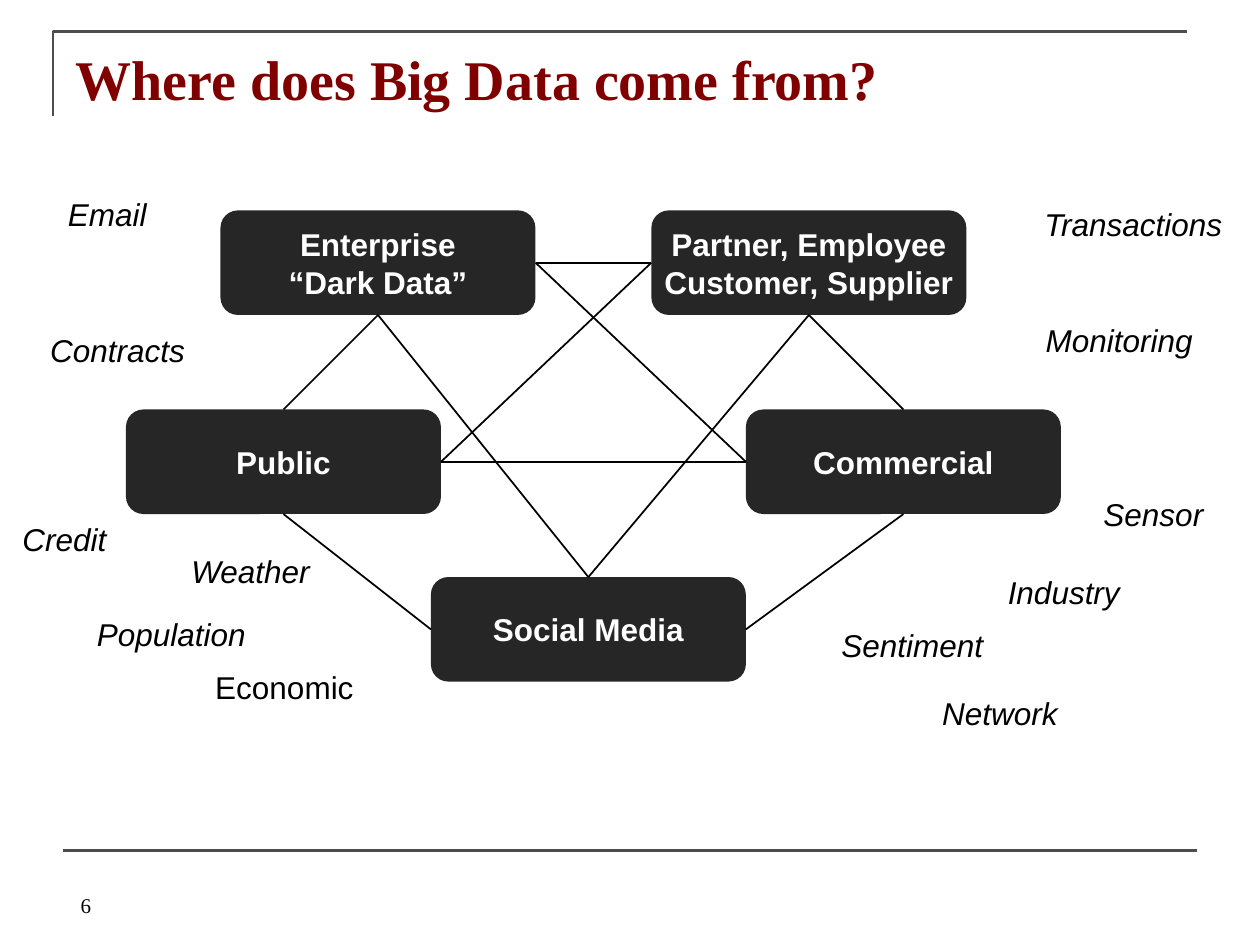
from dataclasses import dataclass

from pptx import Presentation
from pptx.dml.color import RGBColor
from pptx.enum.shapes import MSO_CONNECTOR, MSO_SHAPE
from pptx.enum.text import MSO_ANCHOR, MSO_AUTO_SIZE, PP_ALIGN
from pptx.oxml.ns import qn
from pptx.util import Inches, Pt

TOP, LEFT, BOTTOM, RIGHT = range(4)  # connection sites of a box
STRAIGHT = MSO_CONNECTOR.STRAIGHT
ROUNDED = MSO_SHAPE.ROUNDED_RECTANGLE
CENTER = PP_ALIGN.CENTER
ANCHOR_TOP, ANCHOR_MID, ANCHOR_LOW = (
    MSO_ANCHOR.TOP, MSO_ANCHOR.MIDDLE, MSO_ANCHOR.BOTTOM)
NO_FIT, GROW = MSO_AUTO_SIZE.NONE, MSO_AUTO_SIZE.SHAPE_TO_FIT_TEXT


@dataclass(frozen=True)
class Theme:
    rule: RGBColor = RGBColor(0x4D, 0x4D, 0x4D)
    title: RGBColor = RGBColor(0x80, 0x00, 0x00)
    box: RGBColor = RGBColor(0x26, 0x26, 0x26)
    light: RGBColor = RGBColor(0xFF, 0xFF, 0xFF)
    dark: RGBColor = RGBColor(0x00, 0x00, 0x00)
    serif: str = "Times New Roman"
    sans: str = "Arial"
    title_size: Pt = Pt(32)
    body_size: Pt = Pt(18)
    page_size: Pt = Pt(12)
    rule_width: Pt = Pt(1.5)
    link_width: Pt = Pt(1)


THEME = Theme()

BOX_SIZE = (2.5, 0.83)
BOXES = {
    "dark": ("Enterprise\v“Dark Data”", 1.75, 1.67),
    "people": ("Partner, Employee\vCustomer, Supplier", 5.17, 1.67),
    "public": ("Public", 1, 3.25),
    "trade": ("Commercial", 5.92, 3.25),
    "social": ("Social Media", 3.42, 4.58),
}
LINKS = [
    ("people", LEFT, "dark", RIGHT),
    ("people", LEFT, "public", RIGHT),
    ("people", BOTTOM, "social", TOP),
    ("people", BOTTOM, "trade", TOP),
    ("dark", BOTTOM, "social", TOP),
    ("dark", BOTTOM, "public", TOP),
    ("public", BOTTOM, "social", LEFT),
    ("trade", BOTTOM, "social", RIGHT),
    ("dark", RIGHT, "trade", LEFT),
    ("trade", LEFT, "public", RIGHT),
]
# text, left, top, width, italic
LABELS = [
    ("Transactions", 8.19, 1.58, 1.64, True),
    ("Monitoring", 8.2, 2.5, 1.38, True),
    ("Sensor", 8.66, 3.88, 1, True),
    ("Economic", 1.61, 5.25, 1.31, False),
    ("Population", 0.67, 4.83, 1.39, True),
    ("Sentiment", 6.58, 4.92, 1.34, True),
    ("Email", 0.44, 1.5, 0.83, True),
    ("Contracts", 0.3, 2.58, 1.28, True),
    ("Network", 7.38, 5.46, 1.13, True),
    ("Industry", 7.9, 4.5, 1.1, True),
    ("Credit", 0.08, 4.08, 0.88, True),
    ("Weather", 1.42, 4.33, 1.15, True),
]


def write(frame, text, font, size, color, bold=False, italic=False):
    frame.text = text
    for run in frame.paragraphs[0].runs:
        run.font.name = font
        run.font.size = size
        run.font.color.rgb = color
        run.font.bold = bold
        run.font.italic = italic


def draw_line(line, color, width):
    line.color.rgb = color
    line.width = width


def add_line(slide, start, end, color, width):
    line = slide.shapes.add_connector(
        STRAIGHT, *(Inches(n) for n in (*start, *end)))
    draw_line(line.line, color, width)
    props = line._element.spPr
    props.append(props.makeelement(qn("a:effectLst"), {}))
    return line


def add_corner(slide):
    """Draw the open corner rule around the title."""
    pen = slide.shapes.build_freeform(Inches(0.42), Inches(0.92))
    pen.add_line_segments(
        [(Inches(0.42), Inches(0.25)), (Inches(9.42), Inches(0.25))],
        close=False)
    corner = pen.convert_to_shape()
    corner.fill.background()
    corner.shadow.inherit = False
    draw_line(corner.line, THEME.rule, THEME.rule_width)


def set_title(slide, text):
    title = slide.shapes.title
    title.left, title.top = Inches(0.5), Inches(0.3)
    title.width, title.height = Inches(9), Inches(1.25)
    frame = title.text_frame
    write(frame, text, THEME.serif, THEME.title_size, THEME.title, bold=True)
    frame.paragraphs[0].alignment = PP_ALIGN.LEFT
    frame.vertical_anchor = ANCHOR_TOP
    frame.auto_size = NO_FIT


def add_box(slide, text, left, top):
    box = slide.shapes.add_shape(
        ROUNDED, *(Inches(n) for n in (left, top, *BOX_SIZE)))
    box.shadow.inherit = False
    box.fill.solid()
    box.fill.fore_color.rgb = THEME.box
    box.line.fill.background()
    frame = box.text_frame
    write(frame, text, THEME.sans, THEME.body_size, THEME.light, bold=True)
    frame.paragraphs[0].alignment = CENTER
    frame.vertical_anchor = ANCHOR_MID
    frame.word_wrap = False
    return box


def add_link(slide, tail, exit_site, head, entry_site):
    link = add_line(slide, (0, 0), (1, 1), THEME.dark, THEME.link_width)
    link.begin_connect(tail, exit_site)
    link.end_connect(head, entry_site)


def add_label(slide, text, left, top, width, italic):
    label = slide.shapes.add_textbox(
        *(Inches(n) for n in (left, top, width, 0.37)))
    frame = label.text_frame
    write(frame, text, THEME.sans, THEME.body_size, THEME.dark, italic=italic)
    frame.word_wrap = False
    frame.auto_size = GROW


def add_page(slide, number):
    page = slide.shapes.add_textbox(
        Inches(0.5), Inches(6.83), Inches(2.33), Inches(0.5))
    frame = page.text_frame
    write(frame, number, THEME.serif, THEME.page_size, THEME.dark)
    frame.margin_left = Inches(0.14)
    frame.vertical_anchor = ANCHOR_LOW
    frame.word_wrap = True


def main():
    deck = Presentation()
    deck.slide_width, deck.slide_height = Inches(10), Inches(7.5)
    slide = deck.slides.add_slide(deck.slide_layouts[5])
    add_corner(slide)
    add_line(slide, (0.5, 6.75), (9.5, 6.75), THEME.rule, THEME.rule_width)
    set_title(slide, "Where does Big Data come from?")
    add_page(slide, "6")
    boxes = {key: add_box(slide, *box) for key, box in BOXES.items()}
    for tail, exit_site, head, entry_site in LINKS:
        add_link(slide, boxes[tail], exit_site, boxes[head], entry_site)
    for label in LABELS:
        add_label(slide, *label)
    deck.save("out.pptx")


if __name__ == "__main__":
    main()
